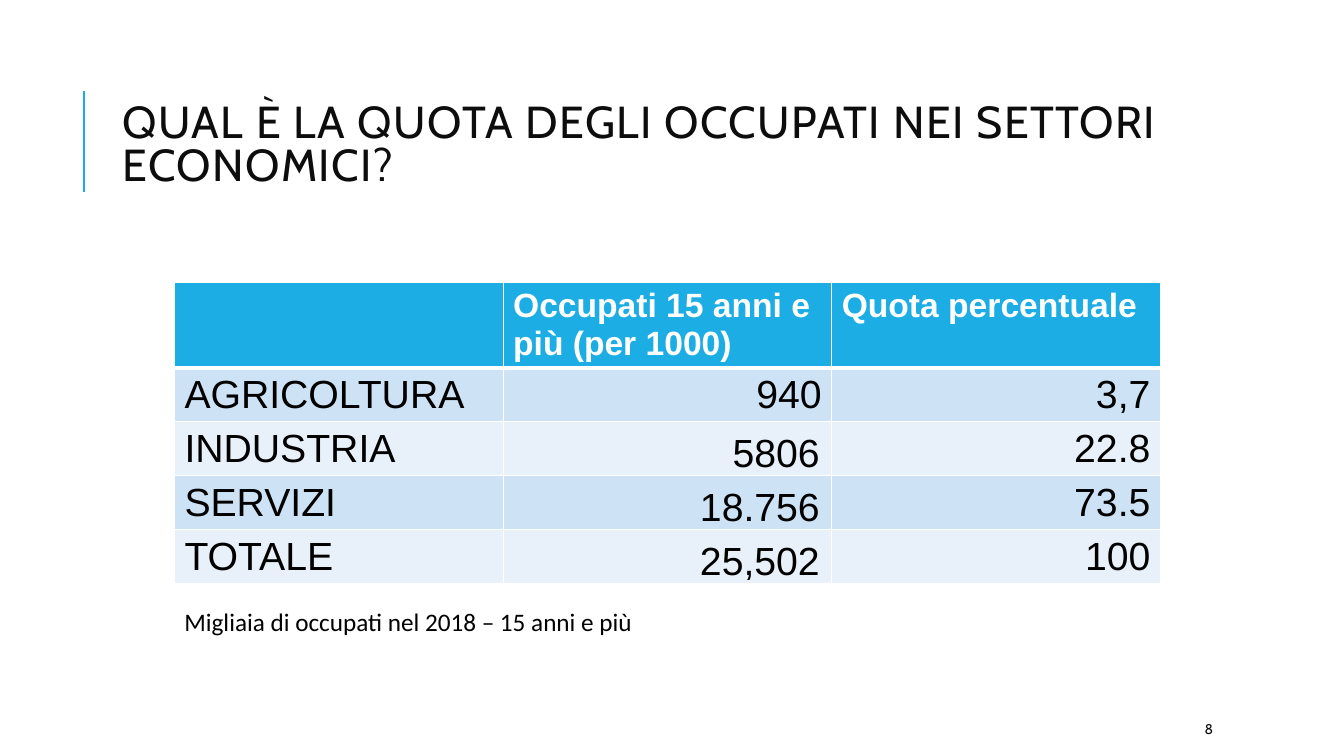
from dataclasses import dataclass

from lxml.etree import SubElement
from pptx import Presentation
from pptx.dml.color import RGBColor
from pptx.enum.shapes import MSO_CONNECTOR as Connector
from pptx.enum.text import MSO_ANCHOR as Anchor, PP_ALIGN as Align
from pptx.oxml import parse_xml
from pptx.oxml.ns import nsdecls, qn
from pptx.util import Inches, Pt


@dataclass(frozen=True)
class Theme:
    accent: str = "1CADE4"
    bands: tuple = ("CDE3F5", "E8F1FA")
    ink: str = "0D0D0D"
    black: str = "000000"
    white: str = "FFFFFF"
    heading: str = "Cabin"
    data: str = "Arial"
    body: str = "Calibri"
    title_size: int = 32
    header_size: int = 24
    data_size: int = 28
    note_size: int = 18
    number_size: int = 10


theme = Theme()
question = "QUAL È LA QUOTA DEGLI OCCUPATI NEI SETTORI ECONOMICI?"
headers = ("", "Occupati 15 anni e più (per 1000)", "Quota percentuale")
sectors = [
    ("AGRICOLTURA", "940", "3,7"),
    ("INDUSTRIA", "5806", "22.8"),
    ("SERVIZI", "18.756", "73.5"),
    ("TOTALE", "25,502", "100"),
]
note = "Migliaia di occupati nel 2018 – 15 anni e più"
page_number = "8"

grid_left, grid_top, grid_width = 1.73, 2.8, 9.78
header_height, sector_height = 0.83, 0.535
grid_height = header_height + sector_height * len(sectors)
note_gap = 0.2
thin, thick = 1, 3


def write(frame, text, font, size, color, bold=False, align=Align.LEFT):
    paragraph = frame.paragraphs[0]
    paragraph.alignment = align
    run = paragraph.add_run()
    run.text = text
    formats = {"name": font, "size": Pt(size), "bold": bold}
    for key, value in formats.items():
        setattr(run.font, key, value)
    run.font.color.rgb = RGBColor.from_string(color)
    return paragraph, run


def place_text(box, text, font, size, color, anchor=Anchor.MIDDLE, wrap=True):
    frame = slide.shapes.add_textbox(*map(Inches, box)).text_frame
    frame.word_wrap = wrap
    frame.vertical_anchor = anchor
    return write(frame, text, font, size, color)


def add_borders(cell, top, bottom):
    widths = {"L": thin, "R": thin, "T": top, "B": bottom}
    for side, width in widths.items():
        cell._tc.get_or_add_tcPr().append(parse_xml(
            f'<a:ln{side} {nsdecls("a")} w="{Pt(width)}"><a:solidFill>'
            f'<a:srgbClr val="{theme.white}"/></a:solidFill></a:ln{side}>'
        ))


def fill_cell(cell, row, column, text):
    is_header = row == 0
    add_borders(cell, thick if row == 1 else thin, thick if is_header else thin)
    cell.fill.solid()
    band = theme.accent if is_header else theme.bands[(row - 1) % 2]
    cell.fill.fore_color.rgb = RGBColor.from_string(band)
    layout = {"margin_bottom": 0 if is_header else Inches(0.01)}
    if row > 1 and column == 1:
        layout = {
            "vertical_anchor": Anchor.BOTTOM,
            "margin_left": Inches(0.01),
            "margin_top": Inches(0.01),
            "margin_right": Inches(0.12),
            "margin_bottom": 0,
        }
    for key, value in layout.items():
        setattr(cell, key, value)
    write(
        cell.text_frame, text, theme.data,
        theme.header_size if is_header else theme.data_size,
        theme.white if is_header else theme.black,
        bold=is_header,
        align=Align.LEFT if is_header or column == 0 else Align.RIGHT,
    )


deck = Presentation()
deck.slide_width, deck.slide_height = Inches(13.33), Inches(7.5)
slide = deck.slides.add_slide(deck.slide_layouts[6])

accent_rule = slide.shapes.add_connector(
    Connector.STRAIGHT, *map(Inches, (0.83, 1.9, 0.83, 0.9))
)
accent_rule.line.color.rgb = RGBColor.from_string(theme.accent)
accent_rule.line.width = Pt(1.5)
SubElement(accent_rule._element.spPr, qn("a:effectLst"))

title_line, title_run = place_text(
    (1.12, 0.64, 10.63, 1.64), question, theme.heading, theme.title_size, theme.ink
)
title_line.line_spacing = 0.8
title_run.font._element.set("spc", "100")

place_text(
    (11.85, 7.08, 1.06, 0.3), page_number, theme.heading, theme.number_size, theme.ink
)

rows = [headers, *sectors]
employment = slide.shapes.add_table(
    len(rows), len(headers),
    *map(Inches, (grid_left, grid_top, grid_width, grid_height)),
).table
for column in employment.columns:
    column.width = Inches(grid_width / len(headers))
for row_index, values in enumerate(rows):
    height = sector_height if row_index else header_height
    employment.rows[row_index].height = Inches(height)
    for column_index, value in enumerate(values):
        cell = employment.cell(row_index, column_index)
        fill_cell(cell, row_index, column_index, value)

place_text(
    (grid_left, grid_top + grid_height + note_gap, 4.79, 0.4), note,
    theme.body, theme.note_size, theme.black, Anchor.TOP, wrap=False,
)

deck.save("out.pptx")
